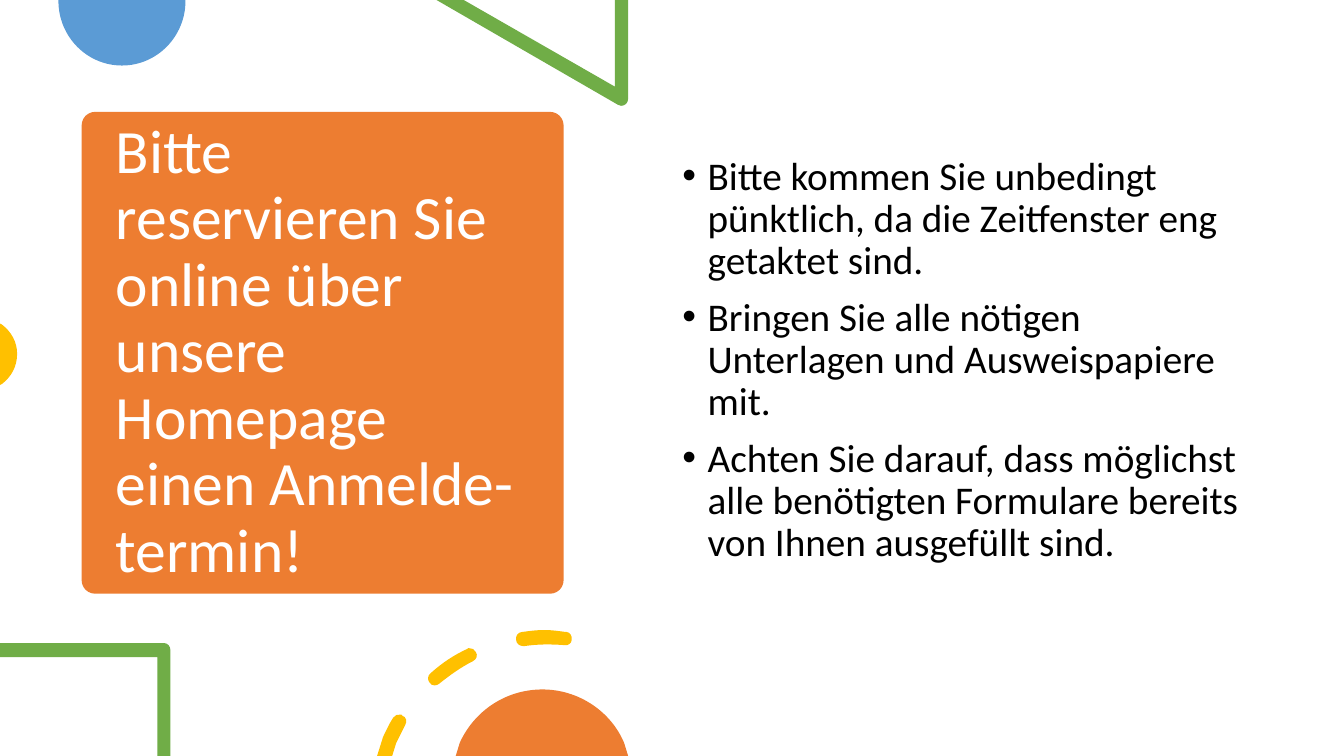
from dataclasses import dataclass

from lxml import etree
from pptx import Presentation
from pptx.dml.color import RGBColor
from pptx.enum.shapes import MSO_SHAPE
from pptx.enum.text import MSO_ANCHOR
from pptx.oxml.ns import qn
from pptx.util import Inches, Pt

ROUNDED = MSO_SHAPE.ROUNDED_RECTANGLE
TOP, MIDDLE = MSO_ANCHOR.TOP, MSO_ANCHOR.MIDDLE

ORANGE, BLUE, GREEN, YELLOW = "ED7D31", "5B9BD5", "70AD47", "FFC000"
WHITE, BLACK = "FFFFFF", "000000"
FONT = "Calibri"

TITLE = "Bitte reservieren Sie online über unsere Homepage einen Anmelde-termin!"
HINTS = [
    "Bitte kommen Sie unbedingt pünktlich, da die Zeitfenster eng getaktet sind.",
    "Bringen Sie alle nötigen Unterlagen und Ausweispapiere mit.",
    "Achten Sie darauf, dass möglichst alle benötigten Formulare bereits von Ihnen ausgefüllt sind.",
]

Segment = tuple[float, ...]


@dataclass
class Ornament:
    color: str
    contours: list[list[Segment]]


@dataclass
class TextBlock:
    box: tuple[float, float, float, float]
    lines: list[str]
    size: int
    color: str
    anchor: MSO_ANCHOR
    top_inset: float = 0.05
    space_before: int = 0
    bulleted: bool = False


CIRCLE = Ornament(BLUE, [[
    (1.84, 0), (0.58, 0), (0.58, 0.01),
    (0.58, 0.36, 0.86, 0.65, 1.21, 0.65), (1.56, 0.65, 1.84, 0.36, 1.84, 0.01),
]])
TRIANGLE = Ornament(GREEN, [[
    (6.23, 0), (6.1, 0), (6.1, 0.86), (4.6, 0), (4.33, 0), (6.13, 1.04),
    (6.14, 1.05, 6.15, 1.05, 6.16, 1.05), (6.2, 1.05, 6.23, 1.02, 6.23, 0.98),
]])
DOT = Ornament(YELLOW, [[
    (0, 3.21), (0, 3.82), (0.02, 3.81),
    (0.11, 3.74, 0.17, 3.64, 0.17, 3.51), (0.17, 3.39, 0.11, 3.29, 0.02, 3.22),
]])
SQUARE = Ornament(GREEN, [[
    (1.63, 6.38), (0, 6.38), (0, 6.52), (1.56, 6.52), (1.56, 7.5), (1.69, 7.5),
    (1.69, 6.45), (1.69, 6.41, 1.66, 6.38, 1.63, 6.38),
]])
DASHED_ARC = Ornament(YELLOW, [
    [
        (3.97, 7.09), (3.94, 7.08, 3.92, 7.1, 3.9, 7.12),
        (3.86, 7.18, 3.83, 7.25, 3.8, 7.31), (3.74, 7.5), (3.89, 7.5), (3.93, 7.37),
        (3.96, 7.31, 3.99, 7.25, 4.02, 7.19), (4.04, 7.16, 4.03, 7.11, 3.99, 7.1),
        (3.99, 7.09, 3.98, 7.09, 3.97, 7.09),
    ],
    [
        (4.65, 6.43), (4.65, 6.43, 4.64, 6.43, 4.63, 6.44),
        (4.5, 6.5, 4.38, 6.58, 4.27, 6.68),
        (4.24, 6.7, 4.24, 6.75, 4.26, 6.77), (4.27, 6.79, 4.29, 6.8, 4.31, 6.8),
        (4.33, 6.8, 4.35, 6.79, 4.36, 6.78), (4.46, 6.7, 4.57, 6.62, 4.69, 6.56),
        (4.73, 6.54, 4.74, 6.5, 4.72, 6.47), (4.71, 6.44, 4.68, 6.43, 4.65, 6.43),
    ],
    [
        (5.4, 6.25), (5.32, 6.25, 5.25, 6.26, 5.18, 6.27),
        (5.14, 6.27, 5.11, 6.31, 5.12, 6.35), (5.12, 6.38, 5.15, 6.41, 5.19, 6.41),
        (5.19, 6.41, 5.19, 6.41, 5.2, 6.41), (5.33, 6.39, 5.46, 6.39, 5.6, 6.4),
        (5.63, 6.41, 5.67, 6.38, 5.67, 6.35), (5.68, 6.31, 5.65, 6.27, 5.62, 6.27),
        (5.62, 6.27, 5.61, 6.27, 5.61, 6.27), (5.54, 6.26, 5.47, 6.25, 5.4, 6.25),
    ],
])
DOME = Ornament(ORANGE, [[
    (5.38, 6.84), (5.01, 6.84, 4.7, 7.06, 4.56, 7.37), (4.52, 7.5), (6.23, 7.5),
    (6.19, 7.37), (6.06, 7.06, 5.74, 6.84, 5.38, 6.84),
]])
ORNAMENTS = [CIRCLE, TRIANGLE, DOT, SQUARE, DASHED_ARC, DOME]

TITLE_BLOCK = TextBlock((1.05, 1.22, 4.31, 4.56), [TITLE], 44, WHITE, MIDDLE)
HINT_BLOCK = TextBlock((6.67, 0.9, 5.75, 5.35), HINTS, 28, BLACK, TOP,
                       top_inset=0.65, space_before=10, bulleted=True)


def rgb(color: str) -> RGBColor:
    return RGBColor.from_string(color)


def paint(sp, color: str) -> None:
    sp.fill.solid()
    sp.fill.fore_color.rgb = rgb(color)
    sp.line.fill.background()
    sp.shadow.inherit = False


def bend(sp, segments: list[Segment]) -> None:
    steps = list(sp._element.iter(qn("a:moveTo"), qn("a:lnTo")))
    for step, segment in zip(steps, segments):
        if len(segment) == 2:
            continue
        step.tag = qn("a:cubicBezTo")
        end = step[0]
        for x, y in zip(segment[:4:2], segment[1:4:2]):
            control = etree.Element(qn("a:pt"))
            control.set("x", str(Inches(x) - sp.left))
            control.set("y", str(Inches(y) - sp.top))
            end.addprevious(control)


def add_ornament(slide, ornament: Ornament) -> None:
    contours = [[(Inches(segment[-2]), Inches(segment[-1])) for segment in contour]
                for contour in ornament.contours]
    builder = slide.shapes.build_freeform(*contours[0][0])
    for i, (start, *ends) in enumerate(contours):
        if i:
            builder.move_to(*start)
        builder.add_line_segments(ends)
    sp = builder.convert_to_shape()
    segments = []
    for contour, ends in zip(ornament.contours, contours):
        segments += contour
        if ends[0] != ends[-1]:
            segments.append(contour[0])
    bend(sp, segments)
    paint(sp, ornament.color)


def add_bullet(p) -> None:
    props = p._p.get_or_add_pPr()
    props.set("marL", str(Inches(0.25)))
    props.set("indent", str(Inches(-0.25)))
    etree.SubElement(props, qn("a:buFont")).set("typeface", "Arial")
    etree.SubElement(props, qn("a:buChar")).set("char", "•")


def add_text(slide, block: TextBlock) -> None:
    tf = slide.shapes.add_textbox(*map(Inches, block.box)).text_frame
    tf.word_wrap = True
    tf.vertical_anchor = block.anchor
    tf.margin_top = Inches(block.top_inset)
    tf.text = "\n".join(block.lines)
    for i, p in enumerate(tf.paragraphs):
        p.line_spacing = 0.9
        p.space_before = Pt(block.space_before if i else 0)
        if block.bulleted:
            add_bullet(p)
        for r in p.runs:
            r.font.name = FONT
            r.font.size = Pt(block.size)
            r.font.color.rgb = rgb(block.color)


def main() -> None:
    prs = Presentation()
    prs.slide_width, prs.slide_height = Inches(13.33), Inches(7.5)
    slide = prs.slides.add_slide(prs.slide_layouts[6])
    panel = slide.shapes.add_shape(
        ROUNDED, Inches(0.81), Inches(1.11), Inches(4.78), Inches(4.78))
    panel.adjustments[0] = 0.028
    paint(panel, ORANGE)
    add_text(slide, TITLE_BLOCK)
    for ornament in ORNAMENTS[:3]:
        add_ornament(slide, ornament)
    add_text(slide, HINT_BLOCK)
    for ornament in ORNAMENTS[3:]:
        add_ornament(slide, ornament)
    prs.save("out.pptx")


if __name__ == "__main__":
    main()
